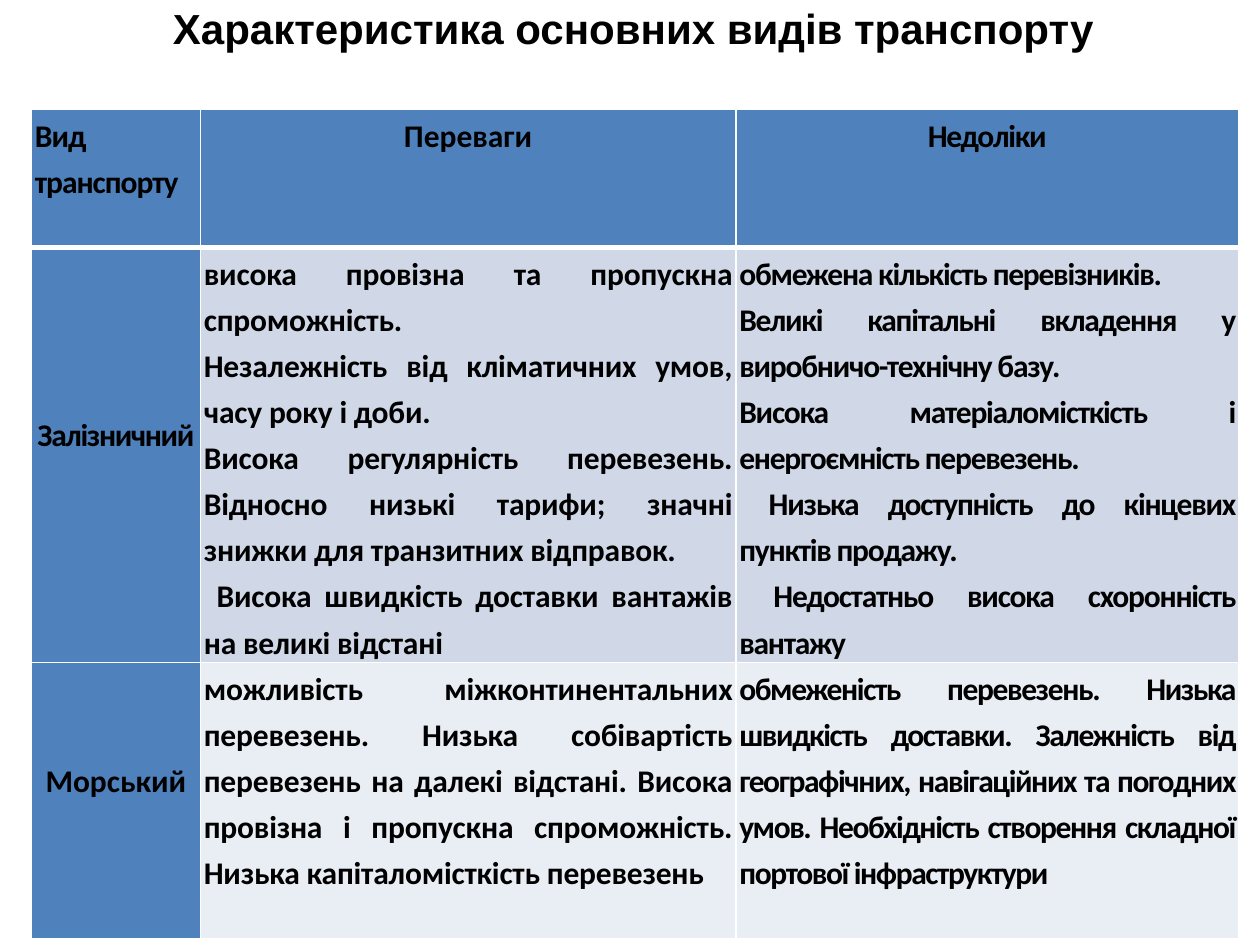
from dataclasses import dataclass

from lxml.etree import SubElement
from pptx import Presentation
from pptx.dml.color import RGBColor
from pptx.enum.text import MSO_ANCHOR, MSO_AUTO_SIZE, PP_ALIGN
from pptx.oxml.ns import qn
from pptx.slide import Slide
from pptx.table import _Cell
from pptx.util import Pt

COLORS = {
    "head": "4F81BD",
    "odd": "D0D8E8",
    "even": "E9EDF4",
    "line": "FFFFFF",
    "text": "000000",
}
LINE = 26


@dataclass
class Entry:
    texts: list[str]
    fill: str
    align: PP_ALIGN = PP_ALIGN.JUSTIFY
    track: float = 0
    below: float = 0
    anchor: MSO_ANCHOR = MSO_ANCHOR.TOP


def header(text: str, track: float, align: PP_ALIGN = PP_ALIGN.CENTER) -> Entry:
    return Entry([text], "head", align, track, LINE)


def label(text: str, track: float) -> Entry:
    return Entry([text], "head", PP_ALIGN.CENTER, track, LINE, MSO_ANCHOR.MIDDLE)


ROWS = [
    [
        header("Вид транспорту", -0.6, PP_ALIGN.JUSTIFY),
        header("Переваги", 0),
        header("Недоліки", -0.7),
    ],
    [
        label("Залізничний", -0.8),
        Entry([
            "висока провізна та пропускна спроможність.",
            "Незалежність від кліматичних умов, часу року і доби.",
            "Висока регулярність перевезень. Відносно низькі тарифи; "
            "значні знижки для транзитних відправок.",
            " Висока швидкість доставки вантажів на великі відстані",
        ], "odd", track=-0.1),
        Entry([
            "обмежена кількість перевізників.",
            "Великі капітальні вкладення у виробничо-технічну базу.",
            "Висока матеріаломісткість і енергоємність перевезень.",
            " Низька доступність до кінцевих пунктів продажу.",
            " Недостатньо висока схоронність вантажу",
        ], "odd", track=-0.7),
    ],
    [
        label("Морський", 0),
        Entry([
            "можливість міжконтинентальних перевезень. Низька собівартість "
            "перевезень на далекі відстані. Висока провізна і пропускна "
            "спроможність. Низька капіталомісткість перевезень",
        ], "even", track=-0.1),
        Entry([
            "обмеженість перевезень. Низька швидкість доставки. Залежність від "
            "географічних, навігаційних та погодних умов. Необхідність "
            "створення складної портової інфраструктури",
        ], "even", track=-0.8, below=LINE),
    ],
]
WIDTHS = [96.5, 306, 287.3]
HEIGHTS = [60, 206, 152.6]


def color(name: str) -> RGBColor:
    return RGBColor.from_string(COLORS[name])


def border(cell: _Cell, side: str, width: float) -> None:
    line = SubElement(cell._tc.get_or_add_tcPr(), qn(f"a:ln{side}"), w=str(Pt(width)))
    fill = SubElement(line, qn("a:solidFill"))
    SubElement(fill, qn("a:srgbClr"), val=COLORS["line"])


def style(par, face: str, size: float, align: PP_ALIGN) -> None:
    par.alignment = align
    par.font.name = face
    par.font.size = Pt(size)
    par.font.bold = True
    par.font.color.rgb = color("text")


def draw_cell(cell: _Cell, entry: Entry, top: float, bottom: float) -> None:
    for side, width in zip("LRTB", (1, 1, top, bottom)):
        border(cell, side, width)
    cell.fill.solid()
    cell.fill.fore_color.rgb = color(entry.fill)
    cell.margin_left = cell.margin_right = Pt(2)
    cell.margin_top = Pt(0)
    cell.margin_bottom = Pt(entry.below)
    cell.vertical_anchor = entry.anchor
    frame = cell.text_frame
    frame.text = "\n".join(entry.texts)
    for par in frame.paragraphs:
        style(par, "Calibri", 18, entry.align)
        par.line_spacing = 1.2
        for run in par.runs:
            run.font._element.set("spc", str(round(entry.track * 100)))


def draw_title(slide: Slide, text: str) -> None:
    title = slide.shapes.title
    title.left, title.top, title.width, title.height = Pt(0), Pt(-3), Pt(696), Pt(65.5)
    frame = title.text_frame
    frame.text = text
    frame.auto_size = MSO_AUTO_SIZE.NONE
    frame.word_wrap = True
    frame.vertical_anchor = MSO_ANCHOR.MIDDLE
    frame.margin_bottom = Pt(31)
    par = frame.paragraphs[0]
    style(par, "Arial", 24, PP_ALIGN.CENTER)
    par._p.get_or_add_pPr().set("indent", str(Pt(28)))


def draw_table(slide: Slide) -> None:
    grid = slide.shapes.add_table(
        len(HEIGHTS), len(WIDTHS), Pt(18), Pt(62.6), Pt(sum(WIDTHS)), Pt(sum(HEIGHTS))
    ).table
    for col, width in zip(grid.columns, WIDTHS):
        col.width = Pt(width)
    for i, (row, height) in enumerate(zip(grid.rows, HEIGHTS)):
        row.height = Pt(height)
        for cell, entry in zip(row.cells, ROWS[i]):
            draw_cell(cell, entry, 3 if i == 1 else 1, 3 if i == 0 else 1)


def main() -> None:
    deck = Presentation()
    deck.slide_width, deck.slide_height = Pt(720), Pt(540)
    slide = deck.slides.add_slide(deck.slide_layouts[5])
    draw_title(slide, "Характеристика основних видів транспорту")
    draw_table(slide)
    deck.save("out.pptx")


if __name__ == "__main__":
    main()
